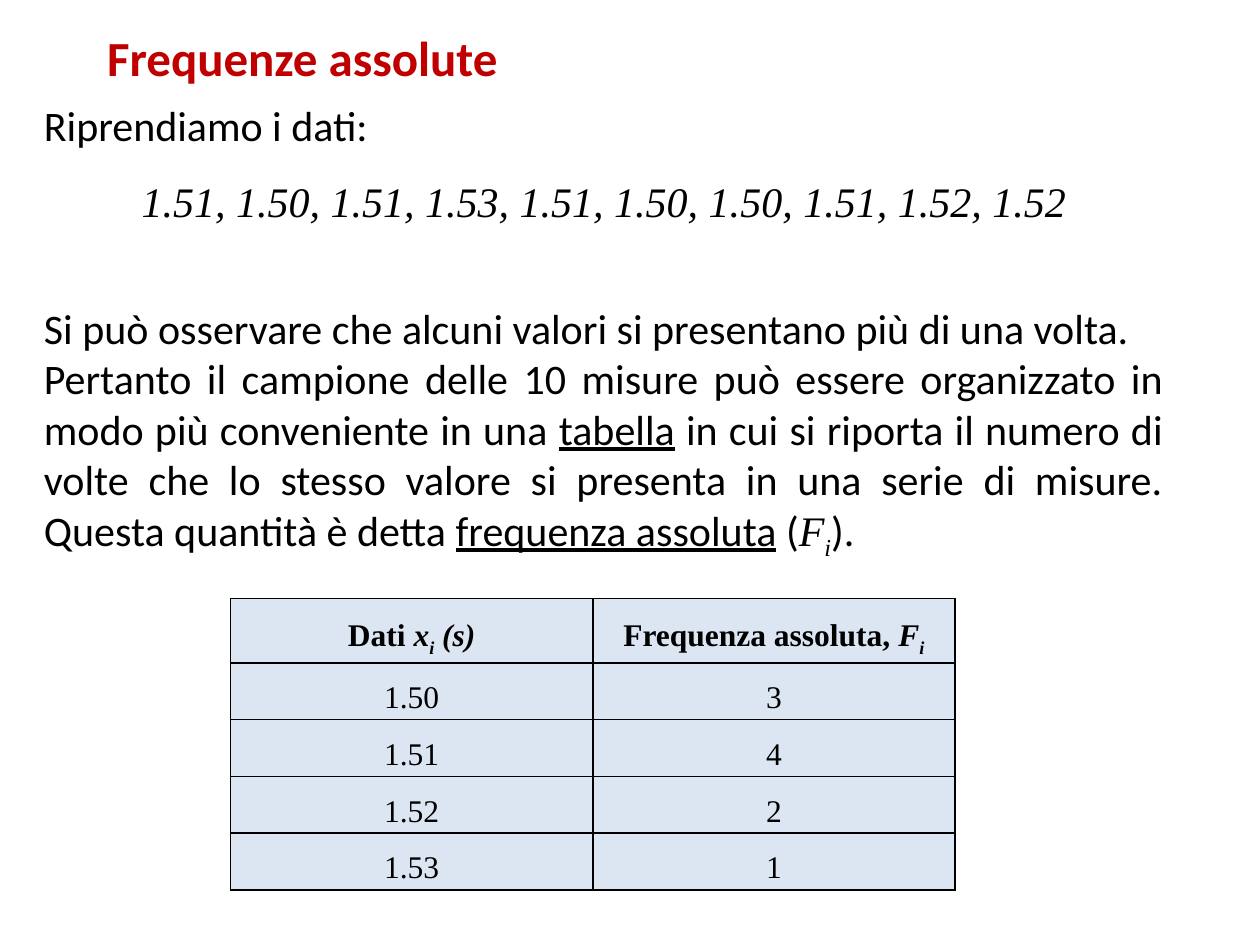
"""Build a slide on absolute frequencies with a text and a frequency table."""
from pptx import Presentation
from pptx.dml.color import RGBColor
from pptx.enum.text import MSO_ANCHOR, MSO_AUTO_SIZE, PP_ALIGN as Align
from pptx.oxml import parse_xml
from pptx.oxml.ns import nsdecls
from pptx.util import Inches, Pt

COLORS = {"title": "C00000", "text": "000000", "cell": "DCE6F2", "border": "000000"}
BODY, MATH = "Calibri", "Times New Roman"


class SlideBuilder:
    """Hold the style and the current slide."""

    def __init__(self, deck):
        self.slide = deck.slides.add_slide(deck.slide_layouts[5])

    def fill_paragraph(self, paragraph, runs, size, font=BODY, align=Align.JUSTIFY,
                       color="text", spacing=1.0, bold=False, italic=False):
        """Fill a paragraph with (text, style) runs; style letters are u, i, m and s."""
        paragraph.alignment = align
        paragraph.line_spacing = spacing
        base = paragraph.font
        base.size, base.name, base.bold, base.italic = Pt(size), font, bold, italic
        base.color.rgb = RGBColor.from_string(COLORS[color])
        for text, style in runs:
            run = paragraph.add_run()
            run.text = text
            if "u" in style:
                run.font.underline = True
            if "i" in style:
                run.font.italic = True
            if "m" in style:
                run.font.name = MATH
            if "s" in style:
                run.font._element.set("baseline", "-25000")

    def title(self, text, left, top, width, height):
        """Place and format the title placeholder."""
        heading = self.slide.shapes.title
        heading.left, heading.top = Inches(left), Inches(top)
        heading.width, heading.height = Inches(width), Inches(height)
        frame = heading.text_frame
        frame.word_wrap = False
        frame.auto_size = MSO_AUTO_SIZE.SHAPE_TO_FIT_TEXT
        frame.vertical_anchor = MSO_ANCHOR.TOP
        self.fill_paragraph(frame.paragraphs[0], [(text, "")], 28, align=Align.LEFT,
                            color="title", bold=True)

    def text(self, left, top, width, height):
        """Add a wrapping text box and return its frame."""
        box = self.slide.shapes.add_textbox(
            Inches(left), Inches(top), Inches(width), Inches(height))
        box.text_frame.word_wrap = True
        box.text_frame.auto_size = MSO_AUTO_SIZE.SHAPE_TO_FIT_TEXT
        return box.text_frame

    def border(self, cell):
        """Draw a thin line on all four sides of a cell."""
        properties = cell._tc.get_or_add_tcPr()
        for position, side in enumerate(("lnL", "lnR", "lnT", "lnB")):
            properties.insert(position, parse_xml(
                f'<a:{side} {nsdecls("a")} w="{Pt(1)}"><a:solidFill>'
                f'<a:srgbClr val="{COLORS["border"]}"/></a:solidFill></a:{side}>'))

    def table(self, rows, left, top, width, height):
        """Add a table whose first row is a bold header."""
        grid = self.slide.shapes.add_table(
            len(rows), len(rows[0]), Inches(left), Inches(top),
            Inches(width), Inches(height)).table
        grid.first_row = grid.horz_banding = False
        for r, row in enumerate(rows):
            for c, runs in enumerate(row):
                cell = grid.cell(r, c)
                cell.margin_left = cell.margin_right = Inches(0.07)
                cell.margin_top = cell.margin_bottom = 0
                cell.fill.solid()
                cell.fill.fore_color.rgb = RGBColor.from_string(COLORS["cell"])
                self.border(cell)
                self.fill_paragraph(cell.text_frame.paragraphs[0], runs, 18, MATH,
                                    Align.CENTER, spacing=1.5, bold=r == 0)


def main():
    deck = Presentation()
    deck.slide_width, deck.slide_height = Inches(10), Inches(7.5)
    builder = SlideBuilder(deck)

    explanation = builder.text(0.25, 0.74, 9.08, 4.14)
    intro = explanation.paragraphs[0]
    data, remark, definition = (explanation.add_paragraph() for _ in range(3))
    builder.fill_paragraph(intro, [("Riprendiamo i dati:", "")], 24)
    builder.fill_paragraph(
        data, [("1.51, 1.50, 1.51, 1.53, 1.51, 1.50, 1.50, 1.51, 1.52, 1.52", "")],
        24, MATH, Align.CENTER, spacing=1.5, italic=True)
    builder.fill_paragraph(remark, [
        ("Si può osservare che alcuni valori si presentano più di una volta.", "")], 24)
    remark.space_before = Pt(44)
    builder.fill_paragraph(definition, [
        ("Pertanto il campione delle 10 misure può essere organizzato in modo "
         "più conveniente in una ", ""),
        ("tabella", "u"),
        (" in cui si riporta il numero di volte che lo stesso valore si presenta "
         "in una serie di misure. Questa quantità è detta ", ""),
        ("frequenza assoluta", "u"),
        (" (", ""), ("F", "im"), ("i", "ims"), (").", "")], 24)

    header = [[("Dati ", ""), ("x", "i"), ("i", "is"), (" (s)", "i")],
              [("Frequenza assoluta, ", ""), ("F", "i"), ("i", "is")]]
    frequencies = {"1.50": 3, "1.51": 4, "1.52": 2, "1.53": 1}
    rows = [[[(value, "")], [(str(count), "")]] for value, count in frequencies.items()]
    builder.table([header] + rows, 1.83, 4.75, 5.75, 2.25)

    builder.title("Frequenze assolute", 0.75, 0.17, 3.34, 0.57)
    deck.save("out.pptx")


if __name__ == "__main__":
    main()
